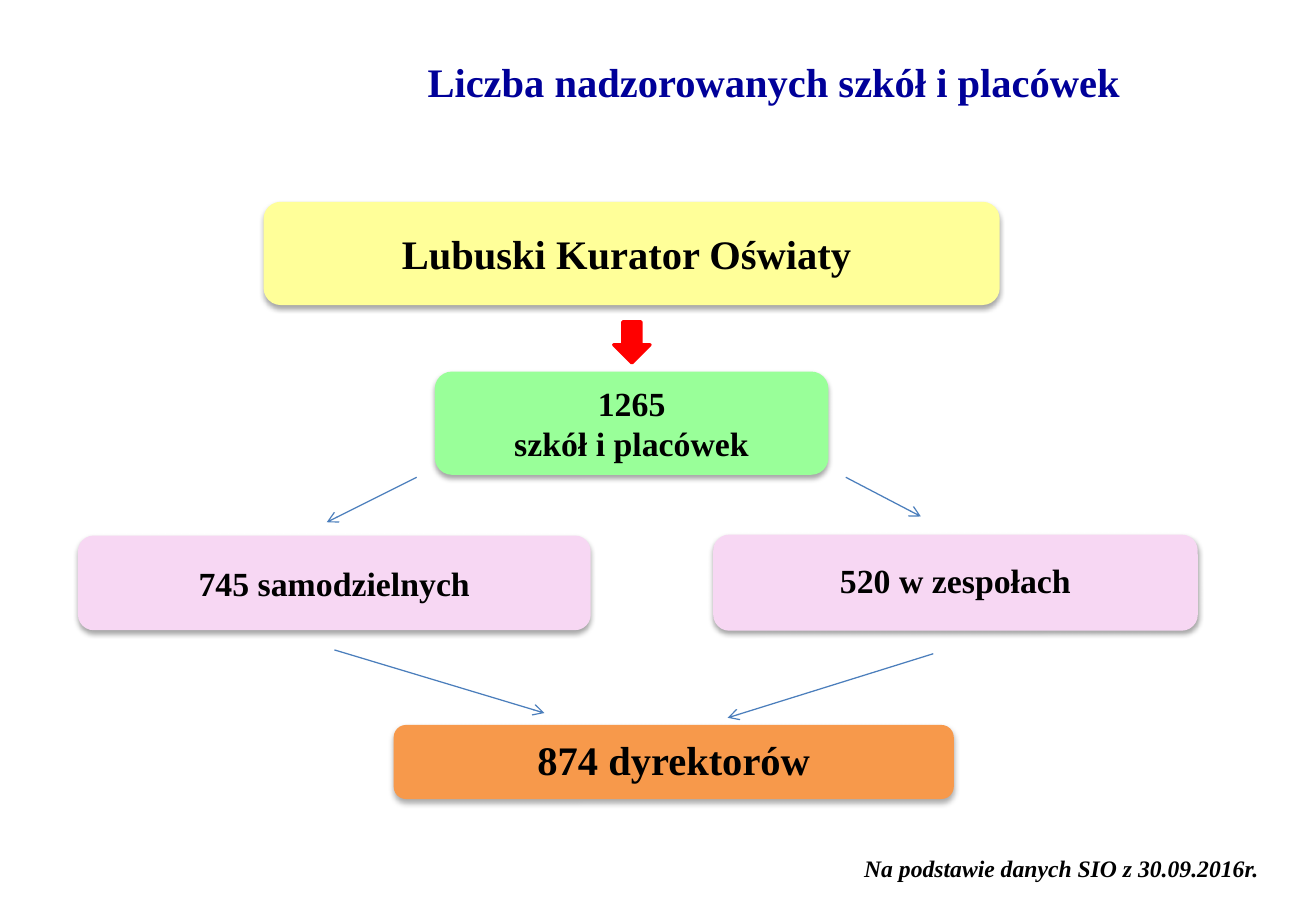
import pptx
import pptx.dml.color
import pptx.enum.shapes
import pptx.enum.text
import pptx.oxml
import pptx.oxml.ns
import pptx.util
from dataclasses import dataclass

Cm, Pt = pptx.util.Cm, pptx.util.Pt
RGB = pptx.dml.color.RGBColor.from_string
Shape = pptx.enum.shapes.MSO_SHAPE
Align = pptx.enum.text.PP_ALIGN
Anchor = pptx.enum.text.MSO_ANCHOR
NAMESPACE = pptx.oxml.ns.nsdecls("a")


@dataclass(frozen=True)
class Theme:
    font: str = "Times New Roman"
    heading: str = "000099"
    text: str = "000000"
    curator: str = "FFFF99"
    schools: str = "99FF99"
    group: str = "F7D7F3"
    heads: str = "F7994B"
    arrow: str = "FF0000"
    line: str = "4B7EBC"
    large: int = 24
    medium: int = 20
    small: int = 14


theme = Theme()


def write(frame, lines, size, color=theme.text, align=Align.CENTER, italic=False, spacing=1.0):
    """Fill a text frame with one bold paragraph per line."""
    frame.word_wrap = True
    frame.vertical_anchor = Anchor.MIDDLE
    frame.text = "\n".join(lines)
    for paragraph in frame.paragraphs:
        paragraph.alignment = align
        paragraph.line_spacing = spacing
        font = paragraph.font
        font.name, font.size = theme.font, Pt(size)
        font.bold, font.italic = True, italic
        font.color.rgb = RGB(color)


def add_shadow(shape, opacity, blur, distance):
    """Give the shape a soft black shadow straight below it."""
    shape._element.spPr.append(pptx.oxml.parse_xml(
        f'<a:effectLst {NAMESPACE}><a:outerShdw blurRad="{Pt(blur)}" dist="{Pt(distance)}" '
        f'dir="5400000" rotWithShape="0"><a:srgbClr val="000000">'
        f'<a:alpha val="{opacity * 1000}"/></a:srgbClr></a:outerShdw></a:effectLst>'))


deck = pptx.Presentation()
deck.slide_width, deck.slide_height = Cm(27.51), Cm(19.05)
slide = deck.slides.add_slide(deck.slide_layouts[5])

title = slide.shapes.title
title.left, title.top, title.width, title.height = Cm(5.38), Cm(0.41), Cm(21.59), Cm(2.59)
write(title.text_frame, ["Liczba nadzorowanych szkół i placówek"], theme.large, theme.heading)

soft, strong = (35, 3.1, 1.8), (32, 3.5, 2.2)
boxes = [
    (["874 dyrektorów"], (8.23, 15.16, 11.71, 1.55), theme.heads, theme.large, 0.9, strong),
    (["Lubuski Kurator Oświaty "], (5.51, 4.22, 15.39, 2.16), theme.curator, theme.large, 1.0, soft),
    (["1265", "szkół i placówek"], (9.09, 7.77, 8.23, 2.16), theme.schools, theme.medium, 1.0, soft),
    (["745 samodzielnych"], (1.63, 11.2, 10.72, 1.98), theme.group, theme.medium, 1.0, soft),
    (["520 w zespołach"], (14.91, 11.18, 10.13, 2.01), theme.group, theme.medium, 0.9, soft),
]
for lines, place, fill, size, spacing, shadow in boxes:
    box = slide.shapes.add_shape(Shape.ROUNDED_RECTANGLE, *map(Cm, place))
    box.fill.solid()
    box.fill.fore_color.rgb = RGB(fill)
    box.line.fill.background()
    add_shadow(box, *shadow)
    write(box.text_frame, lines, size, spacing=spacing)

down_arrow = slide.shapes.add_shape(Shape.DOWN_ARROW, Cm(12.83), Cm(6.73), Cm(0.76), Cm(0.86))
down_arrow.shadow.inherit = False
down_arrow.fill.solid()
down_arrow.fill.fore_color.rgb = RGB(theme.arrow)
down_arrow.line.color.rgb = RGB(theme.arrow)
down_arrow.line.width = Pt(2)

branches = [
    (8.71, 9.98, 6.83, 10.92),
    (17.68, 9.98, 19.25, 10.8),
    (6.99, 13.59, 11.38, 14.91),
    (19.51, 13.67, 15.21, 15.01),
]
for ends in branches:
    branch = slide.shapes.add_connector(pptx.enum.shapes.MSO_CONNECTOR.STRAIGHT, *map(Cm, ends))
    branch.line.color.rgb = RGB(theme.line)
    branch.line.width = Pt(0.75)
    branch.line._get_or_add_ln().append(
        pptx.oxml.parse_xml(f'<a:tailEnd {NAMESPACE} type="arrow"/>'))
    branch._element.spPr.append(pptx.oxml.parse_xml(f"<a:effectLst {NAMESPACE}/>"))

data_source = slide.shapes.add_textbox(Cm(17.68), Cm(17.73), Cm(8.89), Cm(0.86))
write(data_source.text_frame, ["Na podstawie danych SIO z 30.09.2016r."], theme.small,
      align=Align.RIGHT, italic=True)

deck.save("out.pptx")
